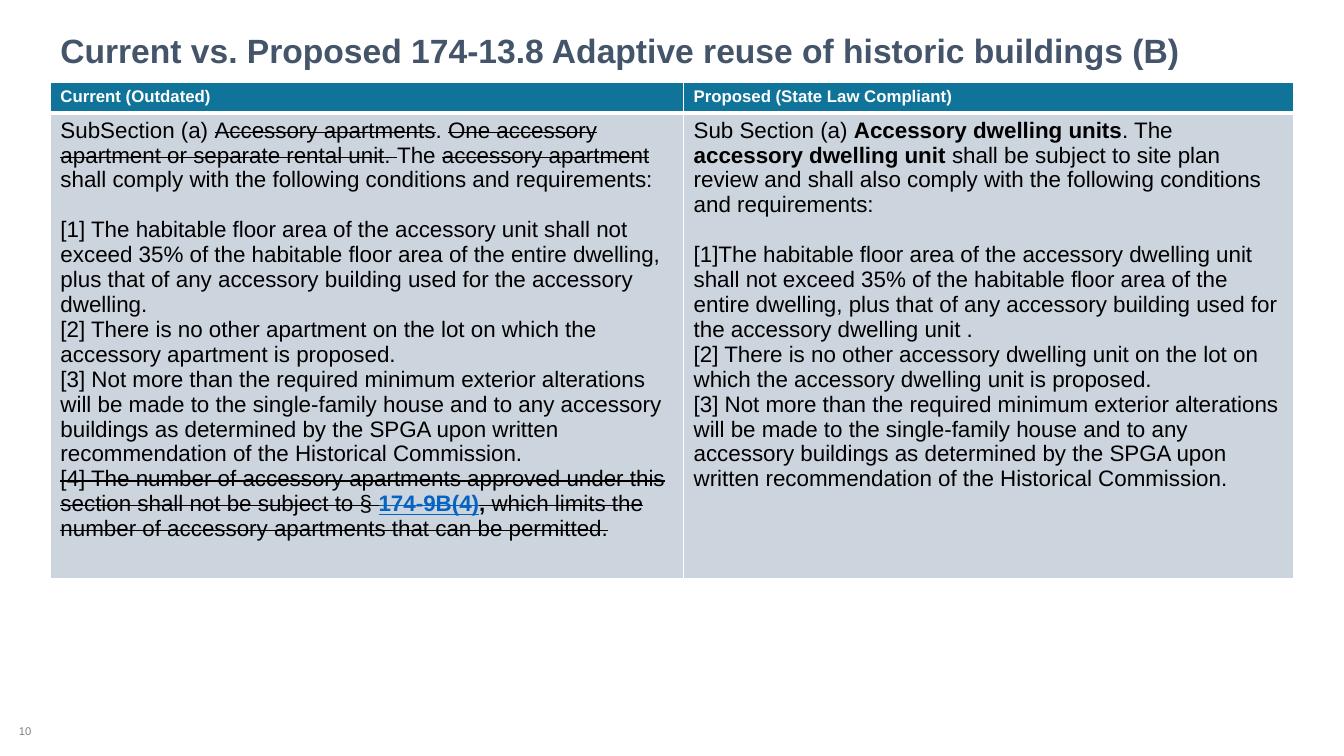
from lxml import etree
from pptx import Presentation
from pptx import util as u
from pptx.dml.color import RGBColor
from pptx.enum import text
from pptx.oxml import ns

WHITE, BLACK, SLATE, GREY = "FFFFFF", "000000", "44546A", "808080"
HEADER_FILL, BODY_FILL, LINK_BLUE = "10739A", "CCD5DE", "0563C1"


def write(frame, paragraphs, size, color=BLACK, bold=False, gap_before=None, **layout):
    """Fill a frame; a run is (text, marks), marks: s strike, b bold, l link style."""
    frame.word_wrap = True
    for index, runs in enumerate(paragraphs):
        paragraph = frame.paragraphs[0] if index == 0 else frame.add_paragraph()
        paragraph.alignment = layout.get("align", text.PP_ALIGN.LEFT)
        paragraph.line_spacing = layout.get("spacing", 1.0)
        if index == gap_before:
            paragraph.space_before = u.Pt(18)
        for words, marks in runs:
            run = paragraph.add_run()
            run.text = words
            run.font.name = "Arial"
            run.font.size = u.Pt(size)
            run.font.bold = bold or "b" in marks
            run.font.underline = "l" in marks
            run.font.color.rgb = RGBColor.from_string(LINK_BLUE if "l" in marks else color)
            if "s" in marks:
                run._r.get_or_add_rPr().set("strike", "sngStrike")


def style_cell(cell, fill, bottom_width):
    properties = cell._tc.get_or_add_tcPr()
    for side, width in (("L", 1), ("R", 1), ("T", 1), ("B", bottom_width)):
        border = etree.SubElement(properties, ns.qn(f"a:ln{side}"), w=str(u.Pt(width)))
        solid = etree.SubElement(border, ns.qn("a:solidFill"))
        etree.SubElement(solid, ns.qn("a:srgbClr"), val=WHITE)
    cell.fill.solid()
    cell.fill.fore_color.rgb = RGBColor.from_string(fill)


exterior = [("[3] Not more than the required minimum exterior alterations will be made to the "
             "single-family house and to any accessory buildings as determined by the SPGA upon "
             "written recommendation of the Historical Commission.", "")]
current = [
    [("SubSection (a) ", ""), ("Accessory apartments", "s"), (". ", ""),
     ("One accessory apartment or separate rental unit. ", "s"), ("The ", ""),
     ("accessory apartment ", "s"),
     ("shall comply with the following conditions and requirements:", "")],
    [("[1] The habitable floor area of the accessory unit shall not exceed 35% of the habitable "
      "floor area of the entire dwelling, plus that of any accessory building used for the "
      "accessory dwelling.", "")],
    [("[2] There is no other apartment on the lot on which the accessory apartment is "
      "proposed.", "")],
    exterior,
    [("[4] The number of accessory apartments approved under this section shall not be "
      "subject to § ", "s"), ("174-9B(4)", "sbl"), (", ", "sb"),
     ("which limits the number of accessory apartments that can be permitted.", "s")],
]
proposed = [
    [("Sub Section (a) ", ""), ("Accessory dwelling units", "b"), (". The ", ""),
     ("accessory dwelling unit ", "b"),
     ("shall be subject to site plan review and shall also comply with the following "
      "conditions and requirements:", "")],
    [("[1]The habitable floor area of the accessory dwelling unit shall not exceed 35% of the "
      "habitable floor area of the entire dwelling, plus that of any accessory building used "
      "for the accessory dwelling unit .", "")],
    [("[2] There is no other accessory dwelling unit on the lot on which the accessory "
      "dwelling unit is proposed.", "")],
    exterior,
]
columns = [("Current (Outdated)", current, 6.28),
           ("Proposed (State Law Compliant)", proposed, 6.05)]

prs = Presentation()
prs.slide_width, prs.slide_height = u.Inches(13.33), u.Inches(7.5)
slide = prs.slides.add_slide(prs.slide_layouts[6])

title = slide.shapes.add_textbox(u.Inches(0.5), u.Inches(0.26), u.Inches(12.33), u.Inches(0.52))
title.text_frame.vertical_anchor = text.MSO_ANCHOR.MIDDLE
write(title.text_frame,
      [[("Current vs. Proposed 174-13.8 Adaptive reuse of historic buildings (B)", "")]],
      24, SLATE, bold=True, spacing=0.9)

page_number = slide.shapes.add_textbox(0, u.Inches(7), u.Inches(0.5), u.Inches(0.5))
page_number.text_frame.vertical_anchor = text.MSO_ANCHOR.MIDDLE
write(page_number.text_frame, [[("10", "")]], 8, GREY, align=text.PP_ALIGN.CENTER)

comparison = slide.shapes.add_table(2, 2, u.Inches(0.5), u.Inches(0.82),
                                    u.Inches(12.33), u.Inches(4.78)).table
comparison.rows[0].height = u.Inches(0.3)
comparison.rows[1].height = u.Inches(4.48)
for index, (heading, rules, width) in enumerate(columns):
    comparison.columns[index].width = u.Inches(width)
    heading_cell, rules_cell = comparison.cell(0, index), comparison.cell(1, index)
    style_cell(heading_cell, HEADER_FILL, 3)
    style_cell(rules_cell, BODY_FILL, 1)
    write(heading_cell.text_frame, [[(heading, "")]], 12, WHITE, bold=True)
    write(rules_cell.text_frame, rules, 16, gap_before=1)

prs.save("out.pptx")
